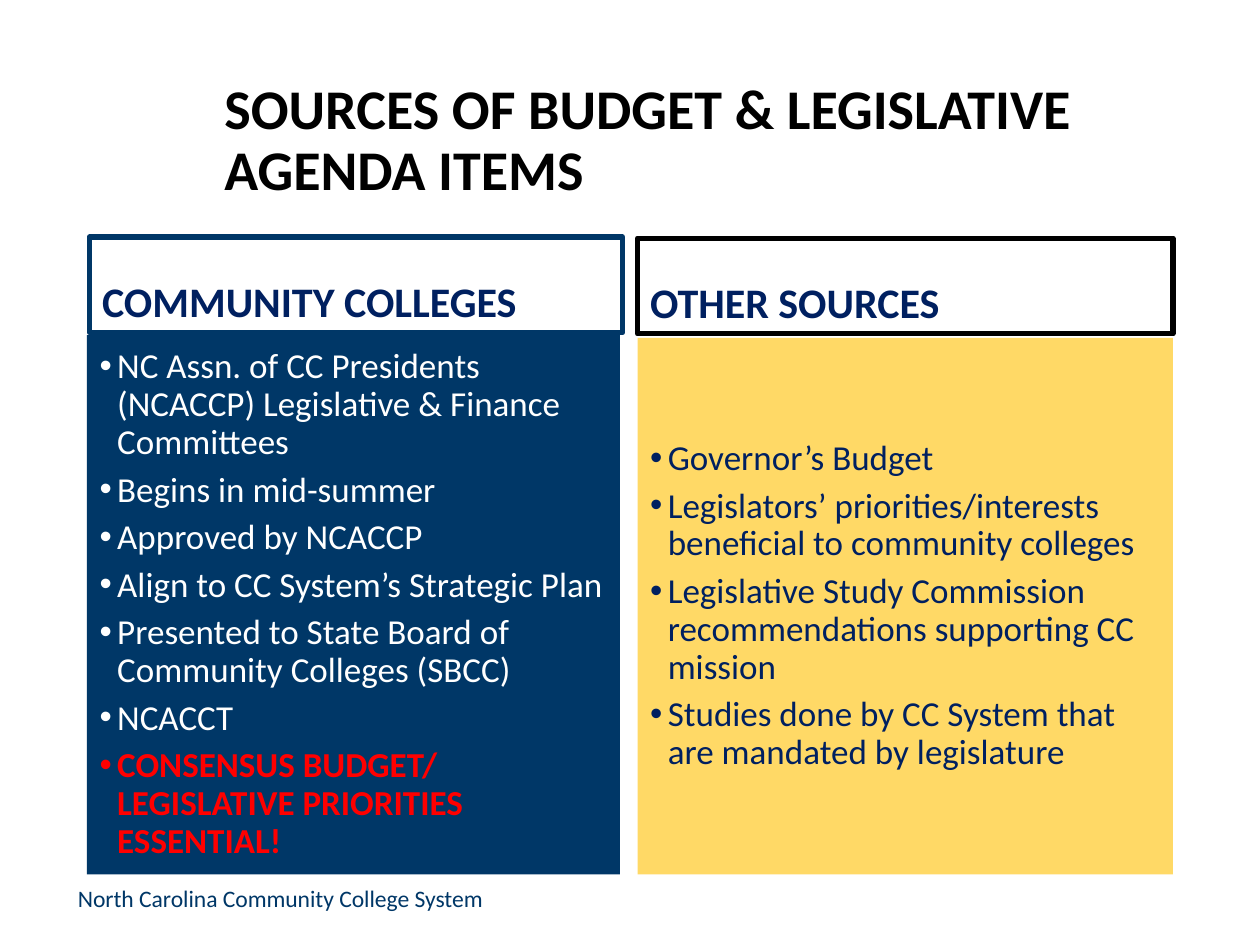
from lxml.etree import SubElement
from pptx import Presentation
from pptx.dml.color import RGBColor
from pptx.enum.text import MSO_ANCHOR as Anchor, MSO_AUTO_SIZE as AutoSize, PP_ALIGN as Align
from pptx.oxml.ns import qn
from pptx.util import Pt

NAVY = RGBColor(0x00, 0x37, 0x67)
INK = RGBColor(0x00, 0x20, 0x60)
GOLD = RGBColor(0xFF, 0xD9, 0x66)
RED = RGBColor(0xFF, 0x00, 0x00)
BLACK = RGBColor(0x00, 0x00, 0x00)
WHITE = RGBColor(0xFF, 0xFF, 0xFF)
FONT = "Calibri"
INDENT = 10.1

COLLEGE_ITEMS = [
    "NC Assn. of CC Presidents (NCACCP) Legislative & Finance Committees",
    "Begins in mid-summer",
    "Approved by NCACCP",
    "Align to CC System’s Strategic Plan",
    "Presented to State Board of Community Colleges (SBCC)",
    "NCACCT",
    "CONSENSUS BUDGET/ LEGISLATIVE PRIORITIES ESSENTIAL!",
]
OTHER_ITEMS = [
    "Governor’s Budget",
    "Legislators’ priorities/interests beneficial to community colleges",
    "Legislative Study Commission recommendations supporting CC mission",
    "Studies done by CC System that are mandated by legislature",
]


def place(shape, box, anchor):
    shape.left, shape.top, shape.width, shape.height = map(Pt, box)
    frame = shape.text_frame
    frame.word_wrap = True
    frame.auto_size = AutoSize.NONE
    frame.vertical_anchor = anchor
    return frame


def style(para, size, color, bold=False):
    para.alignment = Align.LEFT
    para.line_spacing = 0.9
    para.space_before = Pt(0)
    font = para.font
    font.name, font.size, font.bold = FONT, Pt(size), bold
    font.color.rgb = color


def add_bullet(para):
    properties = para._p.get_or_add_pPr()
    properties.set("marL", str(Pt(INDENT)))
    properties.set("indent", str(-Pt(INDENT)))
    SubElement(properties, qn("a:buFont"), typeface="Arial")
    SubElement(properties, qn("a:buChar"), char="•")


def fill_title(shape, box, text):
    frame = place(shape, box, Anchor.MIDDLE)
    frame.text = text
    style(frame.paragraphs[0], 32, BLACK, True)


def fill_heading(shape, box, text, border):
    frame = place(shape, box, Anchor.BOTTOM)
    shape.line.color.rgb = border
    shape.line.width = Pt(3)
    frame.text = text
    style(frame.paragraphs[0], 24, INK, True)


def fill_list(shape, box, items, background, color):
    frame = place(shape, box, Anchor.MIDDLE)
    shape.fill.solid()
    shape.fill.fore_color.rgb = background
    frame.text = "\n".join(items)
    for index, para in enumerate(frame.paragraphs):
        add_bullet(para)
        style(para, 20, color)
        if index:
            para.space_before = Pt(5.6)


def add_footer(page, box, text):
    frame = place(page.shapes.add_textbox(*map(Pt, box)), box, Anchor.TOP)
    para = frame.paragraphs[0]
    para.text = text
    style(para, 13.5, NAVY)
    para.line_spacing = 1.0


def main():
    deck = Presentation()
    deck.slide_width, deck.slide_height = Pt(720), Pt(540)
    page = deck.slides.add_slide(deck.slide_layouts[4])
    title, left_head, left_list, right_head, right_list = page.placeholders

    add_footer(page, (37.4, 501.8, 255.6, 28.8), "North Carolina Community College System")
    fill_title(title, (121, 28.8, 550, 104.4), "SOURCES OF BUDGET & LEGISLATIVE AGENDA ITEMS")
    fill_heading(left_head, (51.1, 135.4, 304.6, 54.7), "COMMUNITY COLLEGES", NAVY)
    fill_list(left_list, (49.7, 191.5, 304.6, 308.2), COLLEGE_ITEMS, NAVY, WHITE)
    closing = left_list.text_frame.paragraphs[-1].font
    closing.bold = True
    closing.color.rgb = RED
    fill_heading(right_head, (364.3, 136.1, 306, 54.7), "OTHER SOURCES", BLACK)
    fill_list(right_list, (364.3, 193, 306, 306.7), OTHER_ITEMS, GOLD, INK)

    deck.save("out.pptx")


if __name__ == "__main__":
    main()
